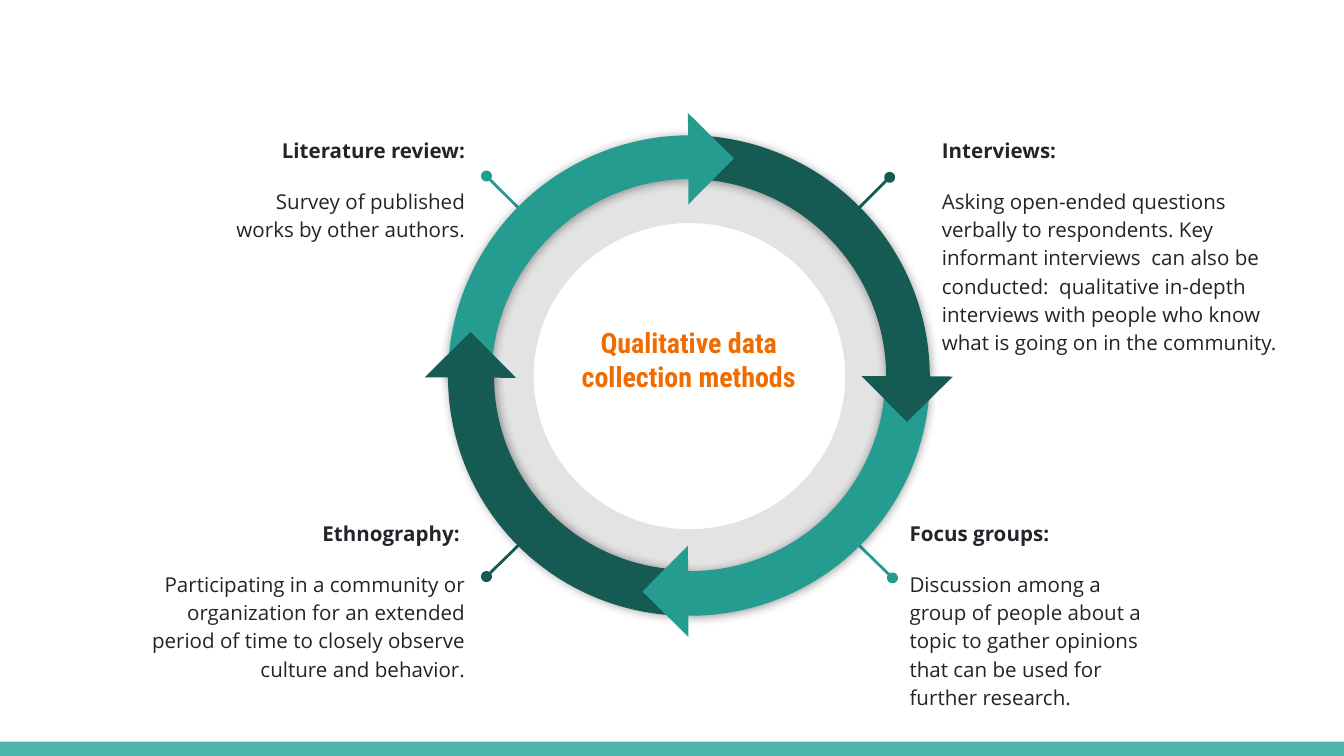
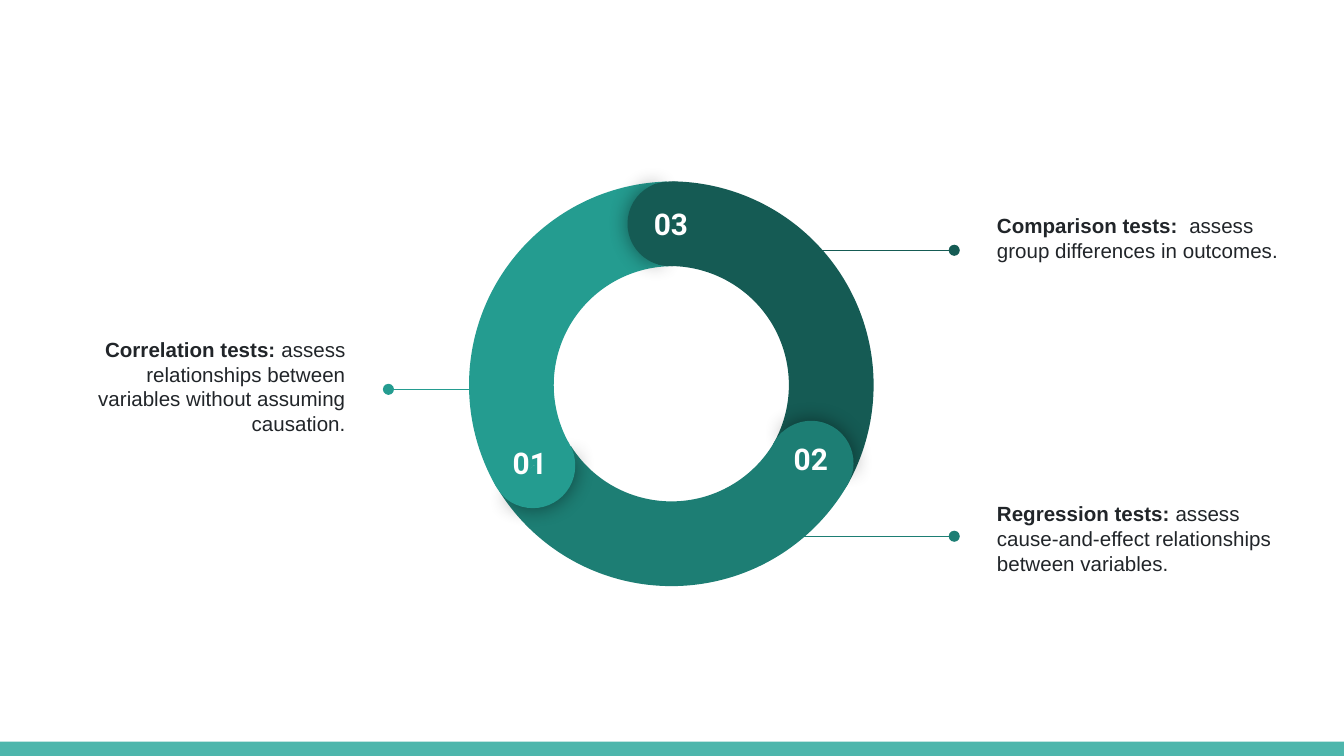
from lxml import etree
from pptx import Presentation
from pptx import util as u
from pptx.dml import color as dml
from pptx.enum import shapes, text
from pptx.oxml import ns

TEAL, MID, DARK = "249C90", "1D7E74", "155B54"
BAND, INK, ORANGE, WHITE = "4DB6AC", "212529", "EF6C00", "FFFFFF"
LEFT, CENTER, RIGHT = text.PP_ALIGN.LEFT, text.PP_ALIGN.CENTER, text.PP_ALIGN.RIGHT
TOP, MIDDLE = text.MSO_ANCHOR.TOP, text.MSO_ANCHOR.MIDDLE
PRESET = shapes.MSO_SHAPE


def paint(fill, value):
    fill.solid()
    fill.fore_color.rgb = dml.RGBColor.from_string(value)


def write(page, place, paras, font="Open Sans", size=11, color=INK, align=LEFT,
          anchor=TOP, spacing=1.0, before=0):
    """Each paragraph is a list of (text, bold) pairs."""
    box = page.shapes.add_textbox(*map(u.Pt, place))
    frame = box.text_frame
    frame.word_wrap = True
    frame.vertical_anchor = anchor
    frame.margin_left = frame.margin_right = u.Pt(7.2)
    frame.margin_top = frame.margin_bottom = u.Pt(7.2)
    for number, spans in enumerate(paras):
        para = frame.add_paragraph() if number else frame.paragraphs[0]
        para.alignment = align
        para.line_spacing = spacing
        para.space_before = u.Pt(before if number else 0)
        for words, bold in spans:
            span = para.add_run()
            span.text = words
            span.font.name = font
            span.font.size = u.Pt(size)
            span.font.bold = bold
            paint(span.font.fill, color)


deck = Presentation()
deck.slide_width, deck.slide_height = u.Pt(720), u.Pt(405)
methods, tests = [deck.slides.add_slide(deck.slide_layouts[6]) for _ in range(2)]

# Bottom band, kept on the master
band = methods.shapes.add_shape(PRESET.RECTANGLE, 0, u.Pt(397.4), u.Pt(720), u.Pt(7.6))
paint(band.fill, BAND)
band.line.fill.background()
band.shadow.inherit = False
deck.slide_master.shapes._spTree.append(band._element)

# Leader lines: dot end, ring end
leaders = [
    (methods, (260.6, 94.3), (293.8, 127.4), TEAL, 1.5),
    (methods, (260.6, 308.9), (293.8, 276.5), DARK, 1.5),
    (methods, (478.1, 309.6), (444.2, 276.5), TEAL, 1.5),
    (methods, (476.6, 95), (444.2, 127.4), DARK, 1.5),
    (tests, (208.1, 208.6), (257.8, 208.6), TEAL, 0.75),
    (tests, (511.2, 134.1), (410.4, 134.1), DARK, 0.75),
    (tests, (511.2, 287.3), (410.4, 287.3), MID, 0.75),
]
for page, dot, end, color, width in leaders:
    leader = page.shapes.add_connector(shapes.MSO_CONNECTOR.STRAIGHT, *map(u.Pt, dot + end))
    leader.line.width = u.Pt(width)
    paint(leader.line.fill, color)
    etree.SubElement(leader.line._get_or_add_ln(), ns.qn("a:headEnd"), type="oval")
    etree.SubElement(leader._element.spPr, ns.qn("a:effectLst"))

# Ring parts: page, preset, place, turn, flip, angles in degrees, thickness, colour, shadow
# A shadow is opacity in percent, blur, distance and direction
soft, side, glow = (40, 5.6, 0.8, 90), (40, 5.6, 0.8, 0), (43, 11.2, 0, 0)
cycle = (239.8, 72.7, 258.5, 257)
parts = [
    (methods, PRESET.DONUT, (247, 80.6, 244.8, 241.9), 0, False, (), 0.161, "000000", None)
]
for turn, flip, angles, thickness, color, shadow in [
    (330.3, True, (239.14, 331.21), 0.091, TEAL, soft),
    (29.7, False, (242.43, 331.7), 0.091, DARK, soft),
    (150.3, False, (300.7, 29.98), 0.096, DARK, side),
    (209.7, True, (299.45, 25.49), 0.093, TEAL, soft),
]:
    parts.append((methods, PRESET.BLOCK_ARC, cycle, turn, flip, angles, thickness, color, shadow))
for left, top, turn, color in [
    (234.7, 185, 135.3, DARK),
    (468.7, 184.3, 315.3, DARK),
    (351.4, 299.5, 44.7, TEAL),
    (351.4, 67.7, 224.7, TEAL),
]:
    parts.append((methods, PRESET.RIGHT_TRIANGLE, (left, top, 34.6, 34.6), turn, False,
                  (), None, color, None))
for left, top, turn, end, color in [
    (249.8, 97.2, 60, 329.69, DARK),
    (250.6, 95.8, 180, 327.71, MID),
    (251.3, 97.2, 300, 328.39, TEAL),
]:
    parts.append((tests, PRESET.BLOCK_ARC, (left, top, 218.2, 218.2), turn, False,
                  (210.38, end), 0.208, color, None))
# Round caps: a shadowed part, then a plain part over it
for left, top, turn, color in [
    (262.8, 226.8, 240, TEAL),
    (336.2, 97.2, 0, DARK),
    (411.8, 225.4, 120, MID),
]:
    place = (left, top, 45.4, 45.4)
    parts.append((tests, PRESET.PIE, place, turn + 0.7, False, (103.17, 249.94), None,
                  color, glow))
    parts.append((tests, PRESET.PIE, place, (turn + 180) % 360, False, (67.14, 286.4), None,
                  color, None))

for page, preset, place, turn, flip, angles, thickness, color, shadow in parts:
    part = page.shapes.add_shape(preset, *map(u.Pt, place))
    part.rotation = turn
    paint(part.fill, color)
    part.line.fill.background()
    part.shadow.inherit = False
    properties = part._element.spPr
    # Angles are stored in 60000ths of a degree, adjustments in 100000ths
    values = [angle * 0.6 for angle in angles] + ([thickness] if thickness else [])
    for number, value in enumerate(values):
        part.adjustments[number] = value
    if flip:
        properties.find(ns.qn("a:xfrm")).set("flipH", "1")
    if preset == PRESET.DONUT:
        tint = properties.find(".//" + ns.qn("a:srgbClr"))
        etree.SubElement(tint, ns.qn("a:alpha"), val="11000")
    if shadow:
        opacity, blur, distance, direction = shadow
        outer = etree.SubElement(
            properties.find(ns.qn("a:effectLst")), ns.qn("a:outerShdw"),
            blurRad=str(u.Pt(blur)), dist=str(u.Pt(distance)),
            dir=str(direction * 60000), algn="bl", rotWithShape="0")
        tint = etree.SubElement(outer, ns.qn("a:srgbClr"), val="000000")
        etree.SubElement(tint, ns.qn("a:alpha"), val=str(opacity * 1000))

# Slide 1: methods around the cycle
for place, align, heading, body in [
    ((112.3, 64.8, 144, 82.8), RIGHT, "Literature review:",
     "Survey of published works by other authors."),
    ((58.3, 270, 198, 64.1), RIGHT, "Ethnography: ",
     "Participating in a community or organization for an extended period of time "
     "to closely observe culture and behavior."),
    ((480.2, 270, 144, 64.1), LEFT, "Focus groups:",
     "Discussion among a group of people about a topic to gather opinions "
     "that can be used for further research."),
    ((497.5, 64.8, 197.3, 64.1), LEFT, "Interviews:",
     "Asking open-ended questions verbally to respondents. Key informant interviews  "
     "can also be conducted:  qualitative in-depth interviews with people who know "
     "what is going on in the community."),
]:
    write(methods, place, [[(heading, True)], [(body, False)]], align=align,
          spacing=1.15, before=12)
write(methods, (302.4, 156, 133.2, 72.7), [[("Qualitative data collection methods", True)]],
      font="Roboto Condensed", size=15, color=ORANGE, align=CENTER, anchor=MIDDLE)

# Slide 2: tests beside the ring, numbers on its caps
for left, top, align, heading, body in [
    (25.2, 156.2, RIGHT, "Correlation tests:",
     " assess relationships between variables without assuming causation."),
    (527, 76.5, LEFT, "Comparison tests: ", " assess group differences in outcomes."),
    (527, 237.6, LEFT, "Regression tests:",
     " assess cause-and-effect relationships between variables."),
]:
    write(tests, (left, top, 167, 101.5), [[(heading, True), (body, False)]],
          font="Arial", align=align, anchor=MIDDLE)
for left, top, label in [(341.3, 103, "03 "), (265.7, 231.1, "01 "), (416.2, 229, "02 ")]:
    write(tests, (left, top, 40.3, 20.9), [[(label, True)]],
          font="Roboto", size=16, color=WHITE, align=CENTER)

deck.save("out.pptx")
